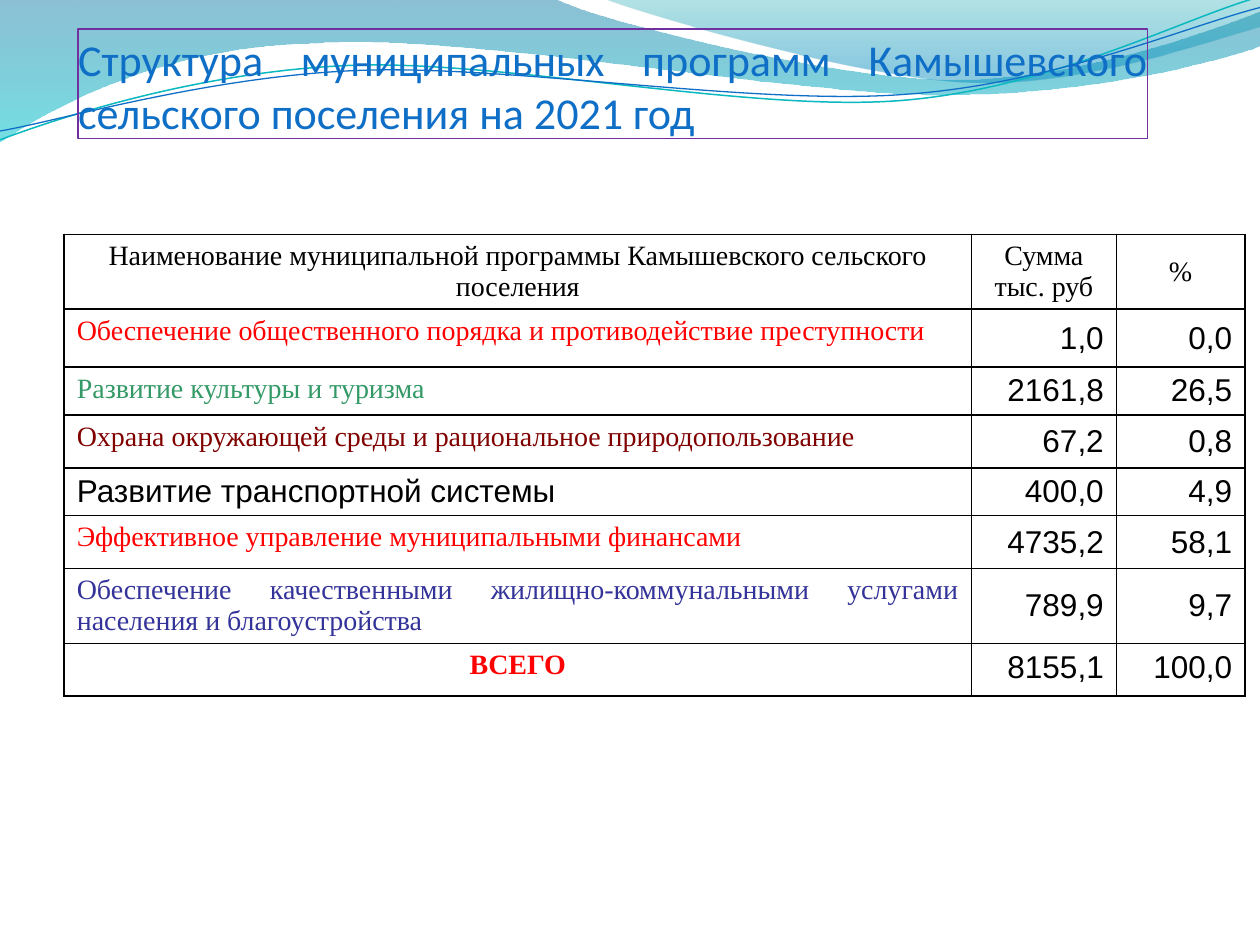
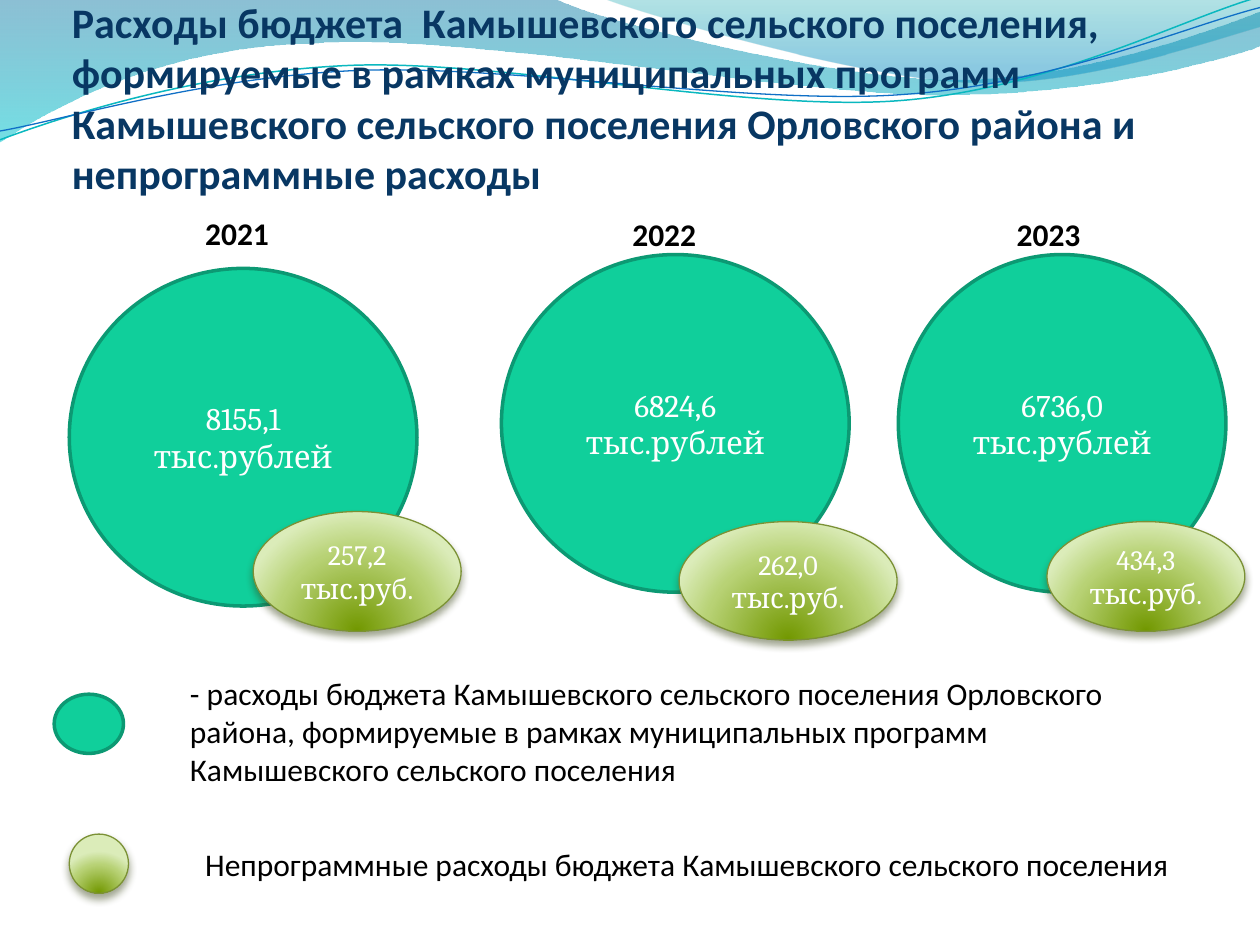
import pptx
import pptx.dml.color
import pptx.enum.shapes
import pptx.enum.text
import pptx.oxml
import pptx.oxml.ns
import pptx.util

Inches = pptx.util.Inches
ALIGN = pptx.enum.text.PP_ALIGN
ANCHOR = pptx.enum.text.MSO_ANCHOR

BLACK, WHITE, RED = "000000", "FFFFFF", "FF0000"
BLUE, NAVY, PURPLE, TEAL = "0F6FC6", "083763", "7030A0", "0AB8BF"
GREEN, DARK_GREEN, OLIVE = "10CF9B", "0C9973", "7B9135"
SERIF, SANS, BODY, CAMBRIA = "Times New Roman", "Arial", "Calibri", "Cambria"

DOWNWARD = '<a:lin ang="5400000" scaled="0"/>'
FROM_BELOW = ('<a:path path="circle"><a:fillToRect l="50000" t="130000" '
              'r="50000" b="-30000"/></a:path>')
OLIVE_STOPS = [(0, "729800", 100), (68, "B8D275", 100), (100, "DBECB9", 100)]

WAVE_BANDS = [
    ([(0, 0), (4.4, -0.01), (4.76, 0.17, 6.64, 0.63, 7.58, 0.63),
      (8.53, 0.63, 9.58, 0.26, 10, 0.09), (10.01, 0.36),
      (9.83, 0.44, 8.7, 0.76, 7.46, 0.75), (6.22, 0.75, 3.82, 0.28, 2.57, 0.34),
      (1.29, 0.36, 0.46, 0.83, -0.01, 1.13), (0, 0)],
     [(0, "0074A1", 45), (100, "00C6CF", 55)]),
    ([(4.79, -0.01), (5.09, 0.11, 6.82, 0.62, 7.69, 0.65),
      (8.56, 0.69, 9.61, 0.32, 10, 0.21), (10, 0), (4.79, -0.01)],
     [(0, "00A1A9", 30), (80, "008BBF", 45)]),
]
WAVE_LINES = [
    ([(0, 1.11), (0.48, 0.93, 1.58, 0.57, 2.77, 0.52),
      (3.95, 0.47, 5.93, 0.89, 7.13, 0.8), (8.33, 0.71, 9.38, 0.15, 9.98, -0.02)],
     TEAL, 0.85),
    ([(0, 1.04), (0.47, 0.96, 1.64, 0.61, 2.83, 0.56),
      (4.03, 0.51, 5.97, 0.84, 7.17, 0.75), (8.36, 0.67, 9.41, 0.21, 10, 0.06)],
     BLUE, 0.75),
]

TABLE_HEADINGS = ["Наименование муниципальной программы Камышевского сельского поселения",
                  "Сумма тыс. руб", "%"]
PROGRAMS = [
    ("Обеспечение общественного порядка и противодействие преступности",
     "1,0", "0,0", RED, SERIF, 16),
    ("Развитие культуры и туризма", "2161,8", "26,5", "339966", SERIF, 16),
    ("Охрана окружающей среды и рациональное природопользование",
     "67,2", "0,8", "800000", SERIF, 16),
    ("Развитие транспортной системы", "400,0", "4,9", BLACK, SANS, 18),
    ("Эффективное управление муниципальными финансами",
     "4735,2", "58,1", RED, SERIF, 16),
    ("Обеспечение качественными жилищно-коммунальными услугами населения и благоустройства",
     "789,9", "9,7", "333399", SERIF, 16),
]
COLUMN_WIDTHS = [7.2, 1.15, 1.02]
ROW_HEIGHTS = [0.59, 0.46, 0.38, 0.42, 0.38, 0.42, 0.59, 0.42]

YEARS = [
    ("2021", (1.53, 1.65), "8155,1 тыс.рублей", (0.55, 2.13, 2.76, 2.68),
     "257,2 тыс.руб.", (2.01, 4.06, 1.65, 0.95)),
    ("2022", (4.92, 1.66), "6824,6 тыс.рублей", (3.98, 2.02, 2.76, 2.68),
     "262,0 тыс.руб.", (5.39, 4.14, 1.73, 0.94)),
    ("2023", (7.97, 1.66), "6736,0 тыс.рублей", (7.13, 2.02, 2.6, 2.68),
     "434,3\nтыс.руб.", (8.31, 4.14, 1.57, 0.87)),
]


def color(value):
    """Turn a hex string into a colour."""
    return pptx.dml.color.RGBColor.from_string(value)


def xml(tag, inner, attributes=""):
    """Parse one element of the drawing namespace."""
    namespace = pptx.oxml.ns.nsdecls("a")
    return pptx.oxml.parse_xml(f"<a:{tag} {namespace} {attributes}>{inner}</a:{tag}>")


def write(frame, text, font, size, value, align=ALIGN.LEFT, bold=False):
    """Fill a text frame with uniformly styled paragraphs."""
    frame.word_wrap = True
    frame.text = text
    for paragraph in frame.paragraphs:
        paragraph.alignment = align
        paragraph.font.name = font
        paragraph.font.size = pptx.util.Pt(size)
        paragraph.font.bold = bold
        paragraph.font.color.rgb = color(value)


def set_line(shape, value, width):
    """Give a shape a solid outline."""
    shape.line.color.rgb = color(value)
    shape.line.width = pptx.util.Pt(width)


def gradient_stop(position, value, opacity):
    """Describe one gradient stop, with alpha only where it is translucent."""
    alpha = f'<a:alpha val="{opacity * 1000}"/>' if opacity < 100 else ""
    return f'<a:gs pos="{position * 1000}"><a:srgbClr val="{value}">{alpha}</a:srgbClr></a:gs>'


def set_gradient(shape, stops, direction):
    """Fill a shape with a gradient of (percent, colour, opacity) stops."""
    marks = "".join(gradient_stop(*stop) for stop in stops)
    shape.fill.solid()
    properties = shape._element.spPr
    solid = properties.find(pptx.oxml.ns.qn("a:solidFill"))
    properties.replace(solid, xml("gradFill", f"<a:gsLst>{marks}</a:gsLst>{direction}",
                                  'rotWithShape="1"'))


def add_curve(slide, outline, closed):
    """Draw an outline of line ends and cubic curves as a freeform."""
    start, *ends = [(Inches(segment[-2]), Inches(segment[-1])) for segment in outline]
    builder = slide.shapes.build_freeform(*start)
    builder.add_line_segments(ends, close=closed)
    shape = builder.convert_to_shape()
    shape.shadow.inherit = False
    lines = list(shape._element.iter(pptx.oxml.ns.qn("a:lnTo")))
    for line, segment in zip(lines, outline[1:]):
        if len(segment) == 6:
            points = "".join(
                f'<a:pt x="{Inches(x) - shape.left}" y="{Inches(y) - shape.top}"/>'
                for x, y in zip(segment[::2], segment[1::2]))
            line.getparent().replace(line, xml("cubicBezTo", points))
    return shape


def add_wave_slide(presentation):
    """Add a slide with the wave decoration at its top."""
    slide = presentation.slides.add_slide(presentation.slide_layouts[6])
    for outline, stops in WAVE_BANDS:
        band = add_curve(slide, outline, True)
        set_gradient(band, stops, DOWNWARD)
        band.line.fill.background()
    for outline, value, width in WAVE_LINES:
        wave = add_curve(slide, outline, False)
        wave.fill.background()
        set_line(wave, value, width)
    return slide


def add_text(slide, box, text, font, size, value, **style):
    """Add a text box."""
    shape = slide.shapes.add_textbox(*map(Inches, box))
    write(shape.text_frame, text, font, size, value, **style)
    return shape


def add_title(slide, box, text, size, value, **style):
    """Add a bottom-anchored title."""
    title = add_text(slide, box, text, BODY, size, value, **style)
    frame = title.text_frame
    frame.vertical_anchor = ANCHOR.BOTTOM
    frame.margin_left = frame.margin_right = frame.margin_bottom = 0
    return title


def add_ellipse(slide, box, text, size):
    """Add an ellipse with centred white text."""
    shape = slide.shapes.add_shape(pptx.enum.shapes.MSO_SHAPE.OVAL, *map(Inches, box))
    shape.shadow.inherit = False
    if text:
        write(shape.text_frame, text, CAMBRIA, size, WHITE, ALIGN.CENTER)
        shape.text_frame.vertical_anchor = ANCHOR.MIDDLE
    return shape


def add_program_circle(slide, box, text=""):
    """Add the green circle of programme spending."""
    circle = add_ellipse(slide, box, text, 18)
    circle.fill.solid()
    circle.fill.fore_color.rgb = color(GREEN)
    set_line(circle, DARK_GREEN, 2)


def add_other_ellipse(slide, box, text=""):
    """Add the shaded olive ellipse of non-programme spending."""
    ellipse = add_ellipse(slide, box, text, 16)
    set_gradient(ellipse, OLIVE_STOPS, FROM_BELOW)
    set_line(ellipse, OLIVE, 0.75)
    effects = ellipse._element.spPr.find(pptx.oxml.ns.qn("a:effectLst"))
    effects.append(xml(
        "outerShdw", '<a:srgbClr val="3A4519"><a:alpha val="48000"/></a:srgbClr>',
        'blurRad="57150" dist="38100" dir="5400000" algn="ctr" rotWithShape="0"'))


def fill_cell(cell, text, font, size, value, align, anchor=ANCHOR.MIDDLE, bold=False):
    """Write a table cell with black borders and no fill."""
    write(cell.text_frame, text, font, size, value, align, bold)
    cell.vertical_anchor = anchor
    top = 0.05 if anchor == ANCHOR.TOP else 0.03
    cell.margin_top, cell.margin_bottom = Inches(top), Inches(0.06 - top)
    properties = cell._tc.get_or_add_tcPr()
    for side in ("lnL", "lnR", "lnT", "lnB"):
        properties.append(xml(
            side, f'<a:solidFill><a:srgbClr val="{BLACK}"/></a:solidFill>', 'w="12700"'))
    cell.fill.background()


def add_program_table(slide):
    """Add the table of programmes with sums and shares."""
    table = slide.shapes.add_table(
        len(ROW_HEIGHTS), len(COLUMN_WIDTHS), Inches(0.51), Inches(1.86),
        Inches(sum(COLUMN_WIDTHS)), Inches(sum(ROW_HEIGHTS))).table
    table.first_row = table.horz_banding = False
    for column, width in zip(table.columns, COLUMN_WIDTHS):
        column.width = Inches(width)
    for row, height in zip(table.rows, ROW_HEIGHTS):
        row.height = Inches(height)
    for index, heading in enumerate(TABLE_HEADINGS):
        fill_cell(table.cell(0, index), heading, SERIF, 16, BLACK, ALIGN.CENTER,
                  ANCHOR.MIDDLE if index else ANCHOR.TOP)
    for row, (name, amount, share, value, font, size) in enumerate(PROGRAMS, 1):
        fill_cell(table.cell(row, 0), name, font, size, value, ALIGN.JUSTIFY, ANCHOR.TOP)
        for column, number in enumerate((amount, share), 1):
            fill_cell(table.cell(row, column), number, SANS, 18, BLACK, ALIGN.RIGHT)
    total = len(PROGRAMS) + 1
    fill_cell(table.cell(total, 0), "ВСЕГО", SERIF, 16, RED, ALIGN.CENTER, ANCHOR.TOP, True)
    for column, number in enumerate(("8155,1", "100,0"), 1):
        fill_cell(table.cell(total, column), number, SANS, 18, BLACK, ALIGN.RIGHT, ANCHOR.TOP)


def build_structure_slide(presentation):
    """Build the slide with the structure of programmes."""
    slide = add_wave_slide(presentation)
    title = add_title(
        slide, (0.62, 0.23, 8.49, 0.87),
        "Структура муниципальных программ Камышевского сельского поселения на 2021 год",
        25.2, BLUE, align=ALIGN.JUSTIFY)
    set_line(title, PURPLE, 0.75)
    add_program_table(slide)


def build_spending_slide(presentation):
    """Build the slide comparing spending by year."""
    slide = add_wave_slide(presentation)
    add_title(
        slide, (0.57, 0.32, 9.08, 1.25),
        "Расходы бюджета  Камышевского сельского поселения, формируемые в рамках "
        "муниципальных программ Камышевского сельского поселения Орловского района "
        "и непрограммные расходы", 24, NAVY, bold=True)
    for year, corner, program, circle_box, other, ellipse_box in YEARS:
        add_text(slide, (*corner, 0.79, 0.4), year, BODY, 18, BLACK, bold=True)
        add_program_circle(slide, circle_box, program)
        add_other_ellipse(slide, ellipse_box, other)
    add_program_circle(slide, (0.43, 5.51, 0.55, 0.47))
    add_text(slide, (1.41, 5.3, 8.07, 1.31),
             "- расходы бюджета Камышевского сельского поселения Орловского района, "
             "формируемые в рамках муниципальных программ Камышевского сельского поселения",
             BODY, 18, BLACK)
    add_other_ellipse(slide, (0.55, 6.62, 0.47, 0.47))
    add_text(slide, (1.53, 6.66, 8.51, 0.4),
             "Непрограммные расходы бюджета Камышевского сельского поселения",
             BODY, 18, BLACK)


def main():
    """Build and save the presentation."""
    presentation = pptx.Presentation()
    presentation.slide_width = Inches(10)
    presentation.slide_height = Inches(7.5)
    build_structure_slide(presentation)
    build_spending_slide(presentation)
    presentation.save("out.pptx")


if __name__ == "__main__":
    main()
